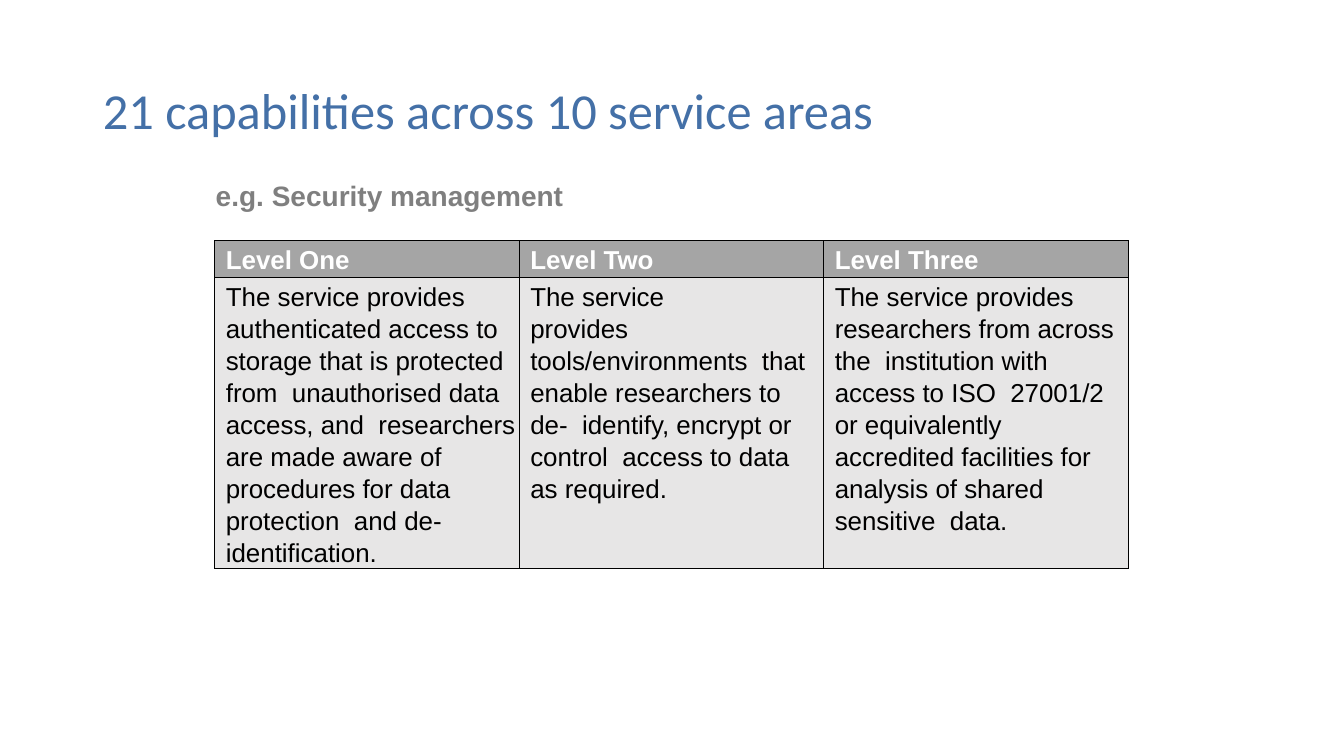
"""Builds a slide with a table of capability levels for security management."""
from dataclasses import dataclass

from lxml import etree
from pptx import Presentation
from pptx.dml.color import RGBColor
from pptx.enum.text import MSO_ANCHOR, PP_ALIGN
from pptx.oxml.ns import qn
from pptx.util import Inches, Pt

LEFT = PP_ALIGN.LEFT
TOP = MSO_ANCHOR.TOP
MIDDLE = MSO_ANCHOR.MIDDLE
TITLE_ONLY_LAYOUT = 5
TABLE_LEFT = 2.13
COLUMN_WIDTH = 3.02
ROW_HEIGHTS = (0.36, 2.42)
CELL_INDENT = 0.11
BORDER_COLOR = "000000"
BORDER_POINTS = 0.75


@dataclass(frozen=True)
class TextStyle:
    """Font settings of a text."""
    font: str
    size: float
    color: str
    bold: bool = False


@dataclass(frozen=True)
class Level:
    """One column of the table."""
    name: str
    opening: str
    description: str


TITLE_STYLE = TextStyle("Calibri", 36, "4470A7")
SUBTITLE_STYLE = TextStyle("Arial", 20, "7F7F7F", True)
HEADER_STYLE = TextStyle("Arial", 18.5, "FFFFFF", True)
BODY_STYLE = TextStyle("Arial", 18.5, "000000")

LEVELS = (
    Level("Level One", "The service provides",
          "authenticated access to  storage that is protected from  unauthorised data access, "
          "and  researchers are made aware of  procedures for data protection  "
          "and de-identification."),
    Level("Level Two", "The service",
          "provides tools/environments  that enable researchers to de-  identify, encrypt or "
          "control  access to data as required."),
    Level("Level Three", "The service provides",
          "researchers from across the  institution with access to ISO  27001/2 or equivalently  "
          "accredited facilities for  analysis of shared sensitive  data."),
)


def rgb(color: str) -> RGBColor:
    """Turn a hex string into a colour."""
    return RGBColor.from_string(color)


def format_paragraph(paragraph, style: TextStyle, spacing: float = 1.0, indent: float = 0) -> None:
    """Apply alignment, indent, line spacing and font to a paragraph."""
    paragraph.alignment = LEFT
    paragraph.line_spacing = spacing
    if indent:
        properties = paragraph._p.get_or_add_pPr()
        properties.set("marL", str(Inches(indent)))
        properties.set("indent", "0")
    for run in paragraph.runs:
        run.font.name = style.font
        run.font.size = Pt(style.size)
        run.font.bold = style.bold
        run.font.color.rgb = rgb(style.color)


def set_margins(holder, left: float, top: float, right: float, bottom: float) -> None:
    """Set the inner margins of a text frame or a cell."""
    holder.margin_left, holder.margin_top = Inches(left), Inches(top)
    holder.margin_right, holder.margin_bottom = Inches(right), Inches(bottom)


def add_borders(cell) -> None:
    """Draw a thin line on each side of a cell."""
    properties = cell._tc.get_or_add_tcPr()
    for position, side in enumerate(("lnL", "lnR", "lnT", "lnB")):
        line = etree.Element(qn(f"a:{side}"), w=str(Pt(BORDER_POINTS)))
        fill = etree.SubElement(line, qn("a:solidFill"))
        etree.SubElement(fill, qn("a:srgbClr"), val=BORDER_COLOR)
        properties.insert(position, line)


def fill_cell(cell, lines: tuple[str, ...], style: TextStyle, fill: str) -> None:
    """Write the lines of a cell and format it."""
    set_margins(cell, 0, 0, 0, 0)
    cell.vertical_anchor = TOP
    cell.fill.solid()
    cell.fill.fore_color.rgb = rgb(fill)
    add_borders(cell)
    cell.text_frame.text = "\n".join(lines)
    for index, paragraph in enumerate(cell.text_frame.paragraphs):
        format_paragraph(paragraph, style, 1.11 if index else 1.19, CELL_INDENT)
        if index:
            paragraph.space_before = Pt(0.1)


def add_title(slide) -> None:
    """Fill and place the title placeholder."""
    title = slide.shapes.title
    title.left, title.top = Inches(0.92), Inches(0.4)
    title.width, title.height = Inches(11.5), Inches(1.45)
    frame = title.text_frame
    frame.text = "21 capabilities across 10 service areas"
    frame.vertical_anchor = MIDDLE
    set_margins(frame, 0.1, 0.05, 0.1, 0.05)
    format_paragraph(frame.paragraphs[0], TITLE_STYLE, 0.9)


def add_level_table(slide) -> None:
    """Add the table with one column for each level."""
    table = slide.shapes.add_table(
        len(ROW_HEIGHTS), len(LEVELS), Inches(TABLE_LEFT), Inches(2.39),
        Inches(COLUMN_WIDTH * len(LEVELS)), Inches(sum(ROW_HEIGHTS))).table
    table.horz_banding = False
    for row, height in zip(table.rows, ROW_HEIGHTS):
        row.height = Inches(height)
    for index, level in enumerate(LEVELS):
        table.columns[index].width = Inches(COLUMN_WIDTH)
        fill_cell(table.cell(0, index), (level.name,), HEADER_STYLE, "A5A5A5")
        fill_cell(table.cell(1, index), (level.opening, level.description), BODY_STYLE, "E7E6E6")


def add_subtitle(slide) -> None:
    """Add the example heading above the table."""
    box = slide.shapes.add_textbox(Inches(TABLE_LEFT), Inches(1.75), Inches(3.58), Inches(0.35))
    frame = box.text_frame
    frame.word_wrap = True
    set_margins(frame, 0, 0.02, 0, 0)
    frame.text = "e.g. Security management"
    format_paragraph(frame.paragraphs[0], SUBTITLE_STYLE, indent=0.01)


def main() -> None:
    """Build and save the presentation."""
    presentation = Presentation()
    presentation.slide_width, presentation.slide_height = Inches(13.33), Inches(7.5)
    slide = presentation.slides.add_slide(presentation.slide_layouts[TITLE_ONLY_LAYOUT])
    add_title(slide)
    add_level_table(slide)
    add_subtitle(slide)
    presentation.save("out.pptx")


if __name__ == "__main__":
    main()
